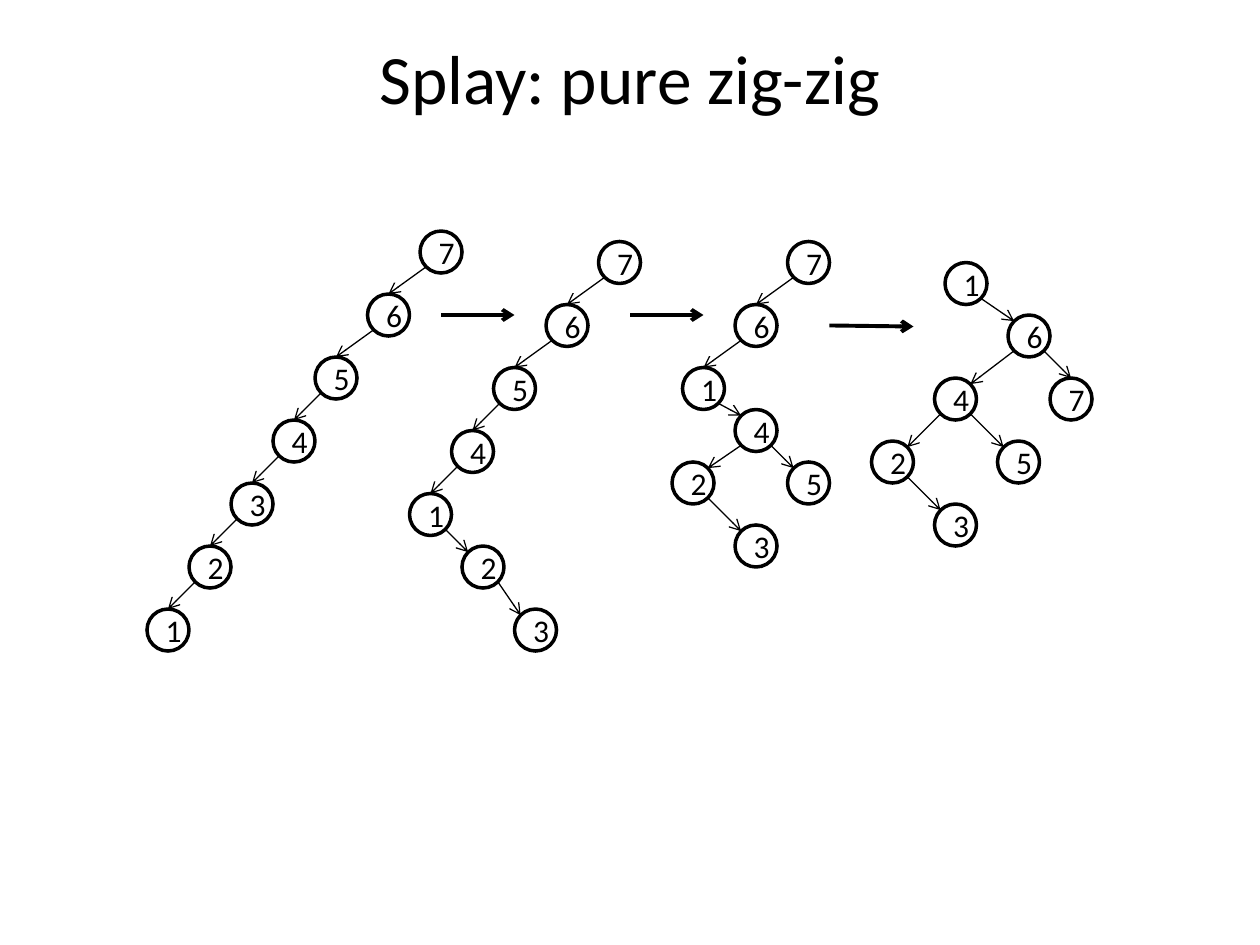
from math import sqrt

from lxml.etree import SubElement
from pptx import Presentation
from pptx.dml.color import RGBColor
from pptx.enum.shapes import MSO_CONNECTOR, MSO_SHAPE
from pptx.enum.text import MSO_ANCHOR, MSO_AUTO_SIZE, PP_ALIGN
from pptx.oxml.ns import qn
from pptx.util import Cm, Pt

# Content: positions are in grid units, twelve to the inch
TITLE = "Splay: pure zig-zig"
# Each tree maps a key to (column, row, parent, where the edge enters)
TREES = [
    {
        "7": (40, 22, None, None),
        "6": (35, 28, "7", "top"),
        "5": (30, 34, "6", "top"),
        "4": (26, 40, "5", "top"),
        "3": (22, 46, "4", "top"),
        "2": (18, 52, "3", "top"),
        "1": (14, 58, "2", "top"),
    },
    {
        "7": (57, 23, None, None),
        "6": (52, 29, "7", "top"),
        "5": (47, 35, "6", "top"),
        "4": (43, 41, "5", "top"),
        "1": (39, 47, "4", "top"),
        "2": (44, 52, "1", "top left"),
        "3": (49, 58, "2", "top left"),
    },
    {
        "7": (75, 23, None, None),
        "6": (70, 29, "7", "top"),
        "1": (65, 35, "6", "top"),
        "4": (70, 39, "1", "top left"),
        "5": (75, 44, "4", "top left"),
        "2": (64, 44, "4", "top right"),
        "3": (70, 50, "2", "top left"),
    },
    {
        "1": (90, 25, None, None),
        "6": (96, 30, "1", "top left"),
        "7": (100, 36, "6", "top"),
        "4": (89, 36, "6", "top right"),
        "5": (95, 42, "4", "top left"),
        "2": (83, 42, "4", "top right"),
        "3": (89, 48, "2", "top left"),
    },
]
STEPS = [((42, 30), (49, 30)), ((60, 30), (67, 30)), ((79, 31), (87, 31.1))]

# Style and geometry
FONT, BLACK, WHITE = "Calibri", "000000", "FFFFFF"
DIAMETER = 4
RADIUS = DIAMETER / 2
DIAGONAL = RADIUS / sqrt(2)
RIM = {
    "top": (0, -RADIUS),
    "top left": (-DIAGONAL, -DIAGONAL),
    "top right": (DIAGONAL, -DIAGONAL),
    "bottom left": (-DIAGONAL, DIAGONAL),
    "bottom right": (DIAGONAL, DIAGONAL),
}


def grid(units):
    return Cm(units * 2.54 / 12)


def color(hex_string):
    return RGBColor.from_string(hex_string)


def write(shape, text, size):
    frame = shape.text_frame
    frame.text = text
    frame.vertical_anchor = MSO_ANCHOR.MIDDLE
    para = frame.paragraphs[0]
    para.alignment = PP_ALIGN.CENTER
    font = para.runs[0].font
    font.name, font.size = FONT, Pt(size)
    font.color.rgb = color(BLACK)


def add_node(slide, key, column, row):
    node = slide.shapes.add_shape(
        MSO_SHAPE.OVAL, grid(column), grid(row), grid(DIAMETER), grid(DIAMETER))
    node.shadow.inherit = False
    node.fill.solid()
    node.fill.fore_color.rgb = color(WHITE)
    node.line.color.rgb = color(BLACK)
    node.line.width = Pt(2)
    write(node, key, 18)


def add_arrow(slide, start, end, width):
    arrow = slide.shapes.add_connector(
        MSO_CONNECTOR.STRAIGHT, *(grid(value) for value in (*start, *end)))
    arrow.line.color.rgb = color(BLACK)
    arrow.line.width = Pt(width)
    properties = arrow.element.spPr
    SubElement(properties.find(qn("a:ln")), qn("a:tailEnd"), type="arrow")
    SubElement(properties, qn("a:effectLst"))


def rim_point(node, site):
    column, row = node[:2]
    across, down = RIM[site]
    return column + RADIUS + across, row + RADIUS + down


def add_tree(slide, tree):
    for key, node in tree.items():
        column, row, parent_key, entry = node
        add_node(slide, key, column, row)
        if parent_key:
            parent = tree[parent_key]
            leave = "bottom left" if column < parent[0] else "bottom right"
            add_arrow(slide, rim_point(parent, leave), rim_point(node, entry), 0.75)


def main():
    deck = Presentation()
    deck.slide_width, deck.slide_height = Cm(25.4), Cm(19.05)
    slide = deck.slides.add_slide(deck.slide_layouts.get_by_name("Title Only"))

    # Title
    title = slide.shapes.title
    title.left, title.top = Cm(1.27), Cm(0.76)
    title.width, title.height = Cm(22.86), Cm(1.57)
    write(title, TITLE, 39.6)
    title.text_frame.auto_size = MSO_AUTO_SIZE.NONE

    # Trees and the steps between them
    for tree in TREES:
        add_tree(slide, tree)
    for start, end in STEPS:
        add_arrow(slide, start, end, 2.25)

    deck.save("out.pptx")


if __name__ == "__main__":
    main()
